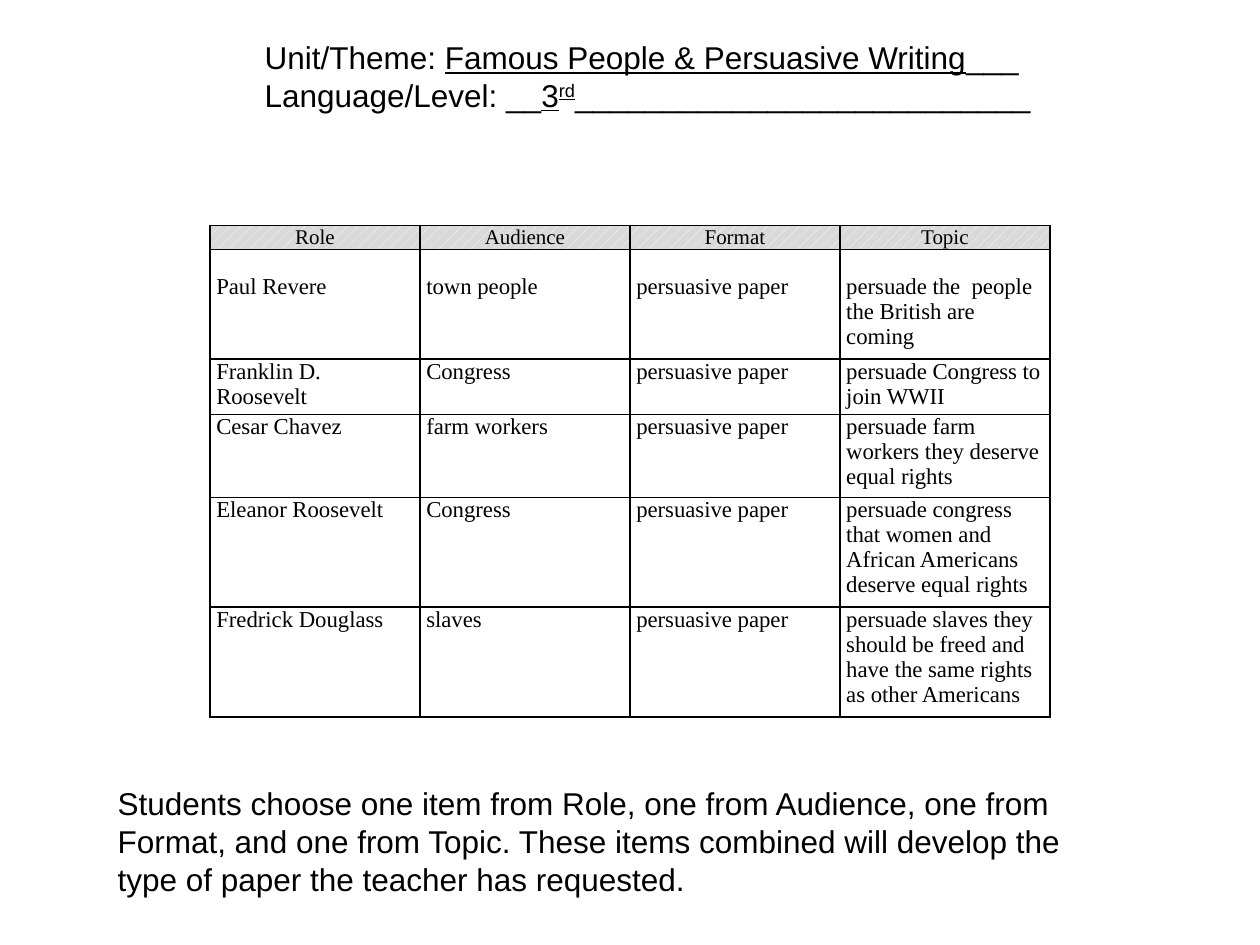
from lxml.etree import SubElement
from pptx import Presentation
from pptx.dml.color import RGBColor
from pptx.enum.dml import MSO_PATTERN
from pptx.enum.text import MSO_ANCHOR, MSO_AUTO_SIZE, PP_ALIGN
from pptx.oxml.ns import qn
from pptx.util import Inches, Pt

theme = {
    "ink": "000000", "paper": "FFFFFF", "header": "D9D9D9",
    "sans": "Arial", "serif": "Times New Roman",
    "text_size": 18, "header_size": 12, "cell_size": 13, "border": 1,
}


def write(para, text, font=theme["sans"], size=theme["text_size"],
          underline=False, raised=False, align=PP_ALIGN.LEFT):
    """Add one formatted span of text to a paragraph."""
    para.alignment = align
    para.space_before = Pt(0)
    span = para.add_run()
    span.text = text
    span.font.name = font
    span.font.size = Pt(size)
    span.font.underline = underline
    span.font.color.rgb = RGBColor.from_string(theme["ink"])
    if raised:
        span._r.get_or_add_rPr().set("baseline", "30000")


def draw_borders(cell):
    """Outline a table cell on all four sides."""
    props = cell._tc.get_or_add_tcPr()
    for side in ("a:lnL", "a:lnR", "a:lnT", "a:lnB"):
        line = SubElement(props, qn(side), w=str(Pt(theme["border"])))
        fill = SubElement(line, qn("a:solidFill"))
        SubElement(fill, qn("a:srgbClr"), val=theme["ink"])


deck = Presentation()
deck.slide_width, deck.slide_height = Inches(10), Inches(7.5)
width, height = deck.slide_width, deck.slide_height
column = width // 12
page = deck.slides.add_slide(deck.slide_layouts[1])
title, body = page.placeholders

# Placeholder positions as shares of the slide
for box, left, top, share in ((title, width // 5, height // 30, 0.8),
                              (body, column, int(height * 0.823), 0.817)):
    box.left, box.top = left, top
    box.width, box.height = int(width * share), int(height * 0.135)
    box.text_frame.word_wrap = True
    box.text_frame.auto_size = MSO_AUTO_SIZE.NONE
    box.text_frame.vertical_anchor = MSO_ANCHOR.TOP

# Heading: unit and level
unit = title.text_frame.paragraphs[0]
write(unit, "Unit/Theme: ")
write(unit, "Famous People & Persuasive Writing", underline=True)
write(unit, "___")
level = title.text_frame.add_paragraph()
write(level, "Language/Level: __")
write(level, "3", underline=True)
write(level, "rd", underline=True, raised=True)
write(level, "_" * 26)

# Role, audience, format and topic table
paper = "persuasive paper"
rows = [
    (0.19, "Role", "Audience", "Format", "Topic"),
    (0.87, "Paul Revere", "town people", paper,
     "persuade the  people the British are coming"),
    (0.44, "Franklin D. Roosevelt", "Congress", paper,
     "persuade Congress to join WWII"),
    (0.66, "Cesar Chavez", "farm workers", paper,
     "persuade farm workers they deserve equal rights"),
    (0.87, "Eleanor Roosevelt", "Congress", paper,
     "persuade congress that women and African Americans deserve equal rights"),
    (0.87, "Fredrick Douglass", "slaves", paper,
     "persuade slaves they should be freed and have the same rights "
     "as other Americans"),
]
table = page.shapes.add_table(len(rows), 4, 2 * column, Inches(1.79),
                              8 * column, Inches(3.9)).table
table.first_row = table.horz_banding = False
for table_column in table.columns:
    table_column.width = 2 * column

for row_index, (row_height, *texts) in enumerate(rows):
    table.rows[row_index].height = Inches(row_height)
    is_header = row_index == 0
    for column_index, text in enumerate(texts):
        cell = table.cell(row_index, column_index)
        cell.margin_left = cell.margin_right = Inches(0.05)
        # The first entry row starts one line lower
        cell.margin_top = Inches(0.2 if row_index == 1 else 0)
        cell.margin_bottom = 0
        draw_borders(cell)
        if is_header:
            cell.fill.patterned()
            cell.fill.pattern = MSO_PATTERN.PERCENT_20
            cell.fill.fore_color.rgb = RGBColor.from_string(theme["paper"])
            cell.fill.back_color.rgb = RGBColor.from_string(theme["header"])
        else:
            cell.fill.background()
        write(cell.text_frame.paragraphs[0], text, font=theme["serif"],
              size=theme["header_size" if is_header else "cell_size"],
              align=PP_ALIGN.CENTER if is_header else PP_ALIGN.LEFT)

# Instructions without a bullet
instructions = body.text_frame.paragraphs[0]
props = instructions._p.get_or_add_pPr()
props.set("marL", "0")
props.set("indent", "0")
SubElement(props, qn("a:buNone"))
write(instructions,
      "Students choose one item from Role, one from Audience, one from Format, "
      "and one from Topic. These items combined will develop the type of paper "
      "the teacher has requested.")

deck.save("out.pptx")
